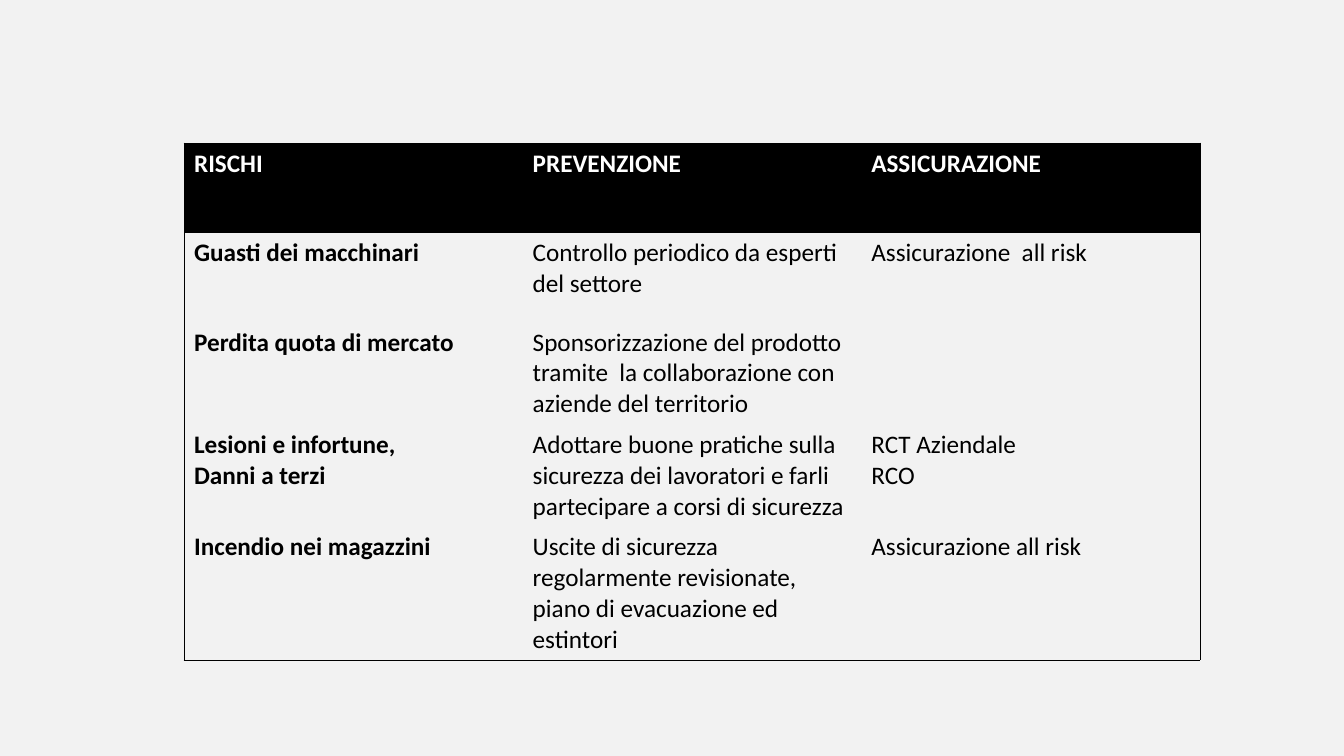
from lxml import etree
from pptx import Presentation
from pptx import util as u
from pptx.dml.color import RGBColor
from pptx.oxml import ns

SCALE = 914400 / 100.8
BLACK, WHITE, PAPER = "000000", "FFFFFF", "F2F2F2"
ROWS = [
    ("RISCHI", "PREVENZIONE", "ASSICURAZIONE"),
    ("Guasti dei macchinari",
     "Controllo periodico da esperti del settore",
     "Assicurazione  all risk"),
    ("Perdita quota di mercato",
     "Sponsorizzazione del prodotto  tramite  la collaborazione con aziende del territorio",
     ""),
    ("Lesioni e infortune,\nDanni a terzi",
     "Adottare buone pratiche sulla sicurezza dei lavoratori e farli partecipare a corsi di sicurezza",
     "RCT Aziendale\nRCO"),
    ("Incendio nei magazzini",
     "Uscite di sicurezza regolarmente revisionate, piano di evacuazione ed estintori",
     "Assicurazione all risk"),
]


def px(n):
    return u.Emu(round(n * SCALE))


def rgb(color):
    return RGBColor.from_string(color)


def set_borders(cell, edges):
    tcPr = cell._tc.get_or_add_tcPr()
    for side in "LRTB":
        ln = etree.SubElement(tcPr, ns.qn(f"a:ln{side}"), w=str(u.Pt(0.5)))
        if side in edges:
            fill = etree.SubElement(ln, ns.qn("a:solidFill"))
            etree.SubElement(fill, ns.qn("a:srgbClr"), val=BLACK)
        else:
            etree.SubElement(ln, ns.qn("a:noFill"))


def fill_cell(cell, words, header, bold, edges):
    set_borders(cell, edges)
    if header:
        cell.fill.solid()
        cell.fill.fore_color.rgb = rgb(BLACK)
    else:
        cell.fill.background()
    cell.text = words
    for p in cell.text_frame.paragraphs:
        p.font.name = "Calibri"
        p.font.size = u.Pt(18)
        p.font.bold = bold
        p.font.color.rgb = rgb(WHITE if header else BLACK)


def risk_table(s, x, y, w, h):
    last_row, last_col = len(ROWS) - 1, len(ROWS[0]) - 1
    table = s.shapes.add_table(last_row + 1, last_col + 1,
                               px(x), px(y), px(w), px(h)).table
    for i, row in enumerate(ROWS):
        for j, words in enumerate(row):
            outer = {"L": j == 0, "R": j == last_col,
                     "T": i == 0, "B": i == last_row}
            edges = [side for side, on in outer.items() if on]
            fill_cell(table.cell(i, j), words, i == 0, i == 0 or j == 0, edges)


def main():
    prs = Presentation()
    prs.slide_width, prs.slide_height = px(1344), px(756)
    s = prs.slides.add_slide(prs.slide_layouts[6])
    s.background.fill.solid()
    s.background.fill.fore_color.rgb = rgb(PAPER)
    risk_table(s, 184, 143, 1016, 448)
    prs.save("out.pptx")


if __name__ == "__main__":
    main()
